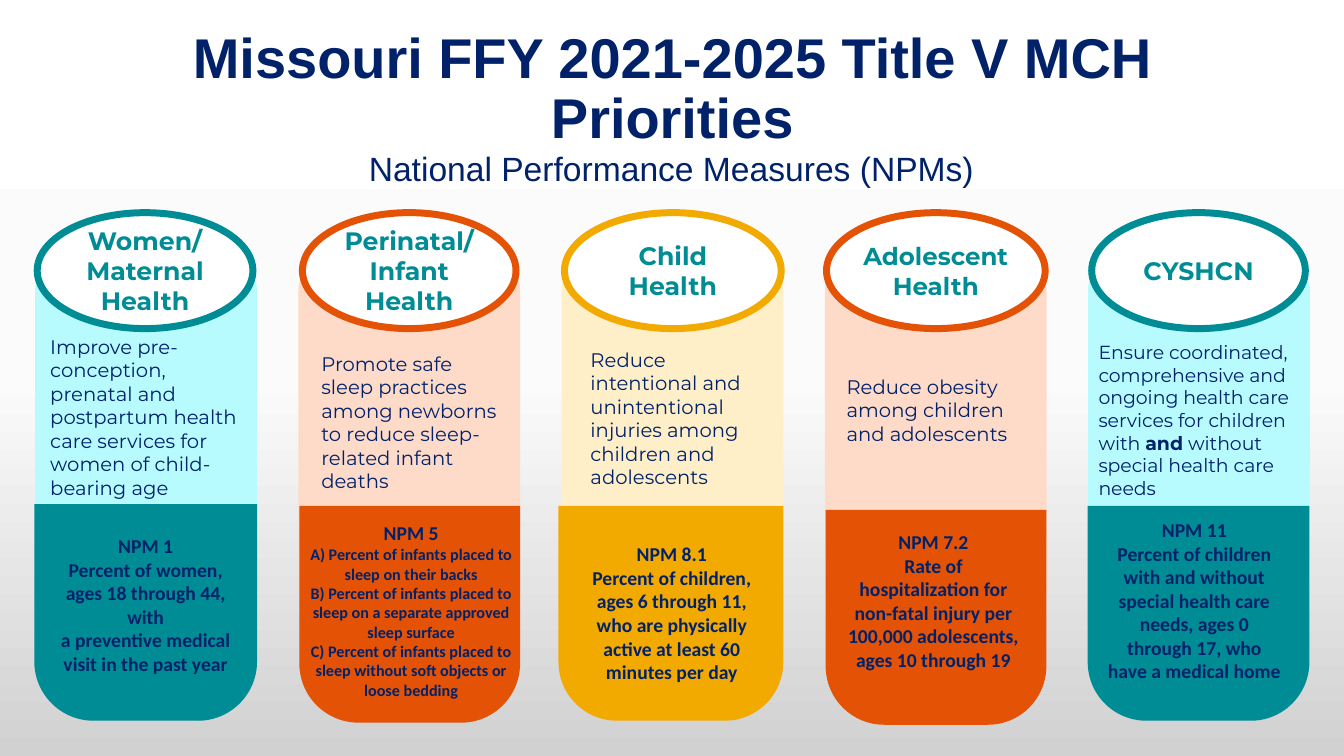
from copy import deepcopy
from dataclasses import dataclass

from pptx import Presentation
from pptx.dml.color import RGBColor
from pptx.enum.shapes import MSO_SHAPE
from pptx.enum.text import MSO_ANCHOR, PP_ALIGN
from pptx.util import Pt

COLORS = {
    "navy": "012169", "white": "FFFFFF",
    "teal": "008C95", "pale teal": "B7FBFF",
    "orange": "E35205", "pale orange": "FEDBC9",
    "gold": "F2A900", "pale gold": "FFEFC9",
}
BACKGROUND_STOPS = [(0, "FFFFFF"), (0.5, "FBFBFB"), (1, "D1D1D1")]
FIRST_LEFT, COLUMN_PITCH, PANEL_WIDTH = 25.2, 188, 158.4
PANEL_TOP, PANEL_HEIGHT = 193.7, 236.9
OVAL_TOP, OVAL_HEIGHT = 151.9, 82.8


@dataclass
class Domain:
    """One population domain: places are left, top, width, height in points."""
    color: str
    name: list
    oval: tuple
    base: tuple
    priority: str
    priority_place: tuple
    measure: list
    measure_place: tuple
    name_size: float = 18
    name_margins: tuple = (7.2, 3.6)
    priority_size: float = 14
    measure_size: float = 14
    measure_margins: tuple = (7.2, 3.6)


DOMAINS = [
    Domain("teal", ["Women/", "Maternal", "Health"], (26.6, 154.1),
           (24.5, 360, 159.1, 154.8),
           "Improve pre-conception, prenatal and postpartum health care "
           "services for women of child- bearing age",
           (28.8, 235.4, 151.9, 126),
           ["NPM 1", "Percent of women, ages 18 through 44, with",
            "a preventive medical visit in the past year"],
           (32.4, 378, 143.3, 126)),
    Domain("orange", ["Perinatal/", "Infant Health"], (216, 152.6),
           (213.8, 361.4, 157.7, 154.8),
           "Promote safe sleep practices among newborns to reduce "
           "sleep-related infant deaths",
           (222.5, 247.7, 139.7, 92.2),
           ["NPM 5", "A) Percent of infants placed to sleep on their backs",
            "B) Percent of infants placed to sleep on a separate approved "
            "sleep surface",
            "C) Percent of infants placed to sleep without soft objects or "
            "loose bedding"],
           (213.8, 370.1, 159.8, 135.4),
           measure_size=11.5, measure_margins=(3.6, 2.2)),
    Domain("gold", ["Child Health"], (403.2, 154.8),
           (398.9, 361.4, 160.6, 153.4),
           "Reduce intentional and unintentional injuries among children "
           "and adolescents",
           (414.7, 244.8, 129.6, 108.7),
           ["NPM 8.1", "Percent of children, ages 6 through 11, who are "
            "physically active at least 60 minutes per day"],
           (405.4, 383.8, 149, 108.7)),
    Domain("orange", ["Adolescent Health"], (590.4, 156.2),
           (589.7, 364.3, 157.7, 153.4),
           "Reduce obesity among children and adolescents",
           (597.6, 264.2, 138.2, 58.3),
           ["NPM 7.2", "Rate of hospitalization for non-fatal injury per "
            "100,000 adolescents, ages 10 through 19"],
           (596.2, 375.1, 141.1, 126),
           name_size=17.5, name_margins=(2.9, 3.6)),
    Domain("teal", ["CYSHCN"], (779.8, 152.6),
           (776.9, 361.4, 158.4, 153.4),
           "Ensure coordinated, comprehensive and ongoing health care "
           "services for children with *and* without special health care needs",
           (777.6, 239.8, 151.2, 121.7),
           ["NPM 11", "Percent of children with and without special health "
            "care needs, ages 0 through 17, who have a medical home"],
           (782.6, 366.5, 141.1, 143.3),
           priority_size=13.5),
]


def rgb(name):
    """Return the named colour."""
    return RGBColor.from_string(COLORS[name])


def write_text(shape, paragraphs, *, size, font, color="navy", bold=False,
               align=PP_ALIGN.CENTER, anchor=MSO_ANCHOR.TOP,
               margins=(7.2, 3.6), spacing=1.0, first_size=None):
    """Fill a shape with paragraphs; words between asterisks switch weight."""
    frame = shape.text_frame
    frame.word_wrap = True
    frame.vertical_anchor = anchor
    frame.margin_left = frame.margin_right = Pt(margins[0])
    frame.margin_top = frame.margin_bottom = Pt(margins[1])
    for index, text in enumerate(paragraphs):
        para = frame.add_paragraph() if index else frame.paragraphs[0]
        para.alignment = align
        para.line_spacing = spacing
        for part, words in enumerate(text.split("*")):
            span = para.add_run()
            span.text = words
            span.font.name = font
            span.font.size = Pt(first_size if first_size and not index else size)
            span.font.bold = bold != (part % 2 == 1)
            span.font.color.rgb = rgb(color)


def add_text(page, place, paragraphs, **style):
    """Add a text box with formatted paragraphs."""
    box = page.shapes.add_textbox(*map(Pt, place))
    write_text(box, paragraphs, **style)


def add_block(page, kind, place, fill, outline=None, adjustments=(), rotation=0):
    """Add a filled preset shape with an optional outline."""
    block = page.shapes.add_shape(kind, *map(Pt, place))
    block.shadow.inherit = False
    block.rotation = rotation
    block.fill.solid()
    block.fill.fore_color.rgb = rgb(fill)
    for index, value in enumerate(adjustments):
        block.adjustments[index] = value
    if outline:
        block.line.color.rgb = rgb(outline)
        block.line.width = Pt(5)
    else:
        block.line.fill.background()
    return block


def paint_background(page):
    """Give the page a vertical three-stop gradient."""
    fill = page.background.fill
    fill.gradient()
    fill.gradient_angle = 270
    first_stop = page._element.xpath(".//a:gsLst/a:gs")[0]
    first_stop.addnext(deepcopy(first_stop))
    for stop, (position, color) in zip(fill.gradient_stops, BACKGROUND_STOPS):
        stop.position = position
        stop.color.rgb = RGBColor.from_string(color)


def add_domain(page, left, domain):
    """Draw one column: panel, base, name oval, priority and measure."""
    add_block(page, MSO_SHAPE.ROUNDED_RECTANGLE,
              (left, PANEL_TOP, PANEL_WIDTH, PANEL_HEIGHT),
              "pale " + domain.color, adjustments=[0.076])
    add_block(page, MSO_SHAPE.ROUND_2_SAME_RECTANGLE, domain.base, domain.color,
              adjustments=[0.273, 0], rotation=180)
    oval_left, oval_width = domain.oval
    oval = add_block(page, MSO_SHAPE.OVAL,
                     (oval_left, OVAL_TOP, oval_width, OVAL_HEIGHT),
                     "white", outline=domain.color)
    write_text(oval, domain.name, size=domain.name_size, font="Montserrat",
               color="teal", bold=True, anchor=MSO_ANCHOR.MIDDLE,
               margins=domain.name_margins)
    add_text(page, domain.priority_place, [domain.priority],
             size=domain.priority_size, font="Montserrat", align=PP_ALIGN.LEFT)
    add_text(page, domain.measure_place, domain.measure,
             size=domain.measure_size, first_size=14, font="Calibri", bold=True,
             margins=domain.measure_margins)


def main():
    """Build the slide and save it."""
    deck = Presentation()
    deck.slide_width, deck.slide_height = Pt(960), Pt(540)
    page = deck.slides.add_slide(deck.slide_layouts[6])
    paint_background(page)
    add_text(page, (66.2, 29.5, 828, 69.8),
             ["Missouri FFY 2021-2025 Title V MCH Priorities"],
             size=40, font="Arial", bold=True, spacing=0.9,
             anchor=MSO_ANCHOR.MIDDLE)
    add_text(page, (119.5, 105.1, 720, 34.6),
             ["National Performance Measures (NPMs)"],
             size=24, font="Arial", spacing=0.9)
    for index, domain in enumerate(DOMAINS):
        add_domain(page, FIRST_LEFT + index * COLUMN_PITCH, domain)
    deck.save("out.pptx")


if __name__ == "__main__":
    main()
